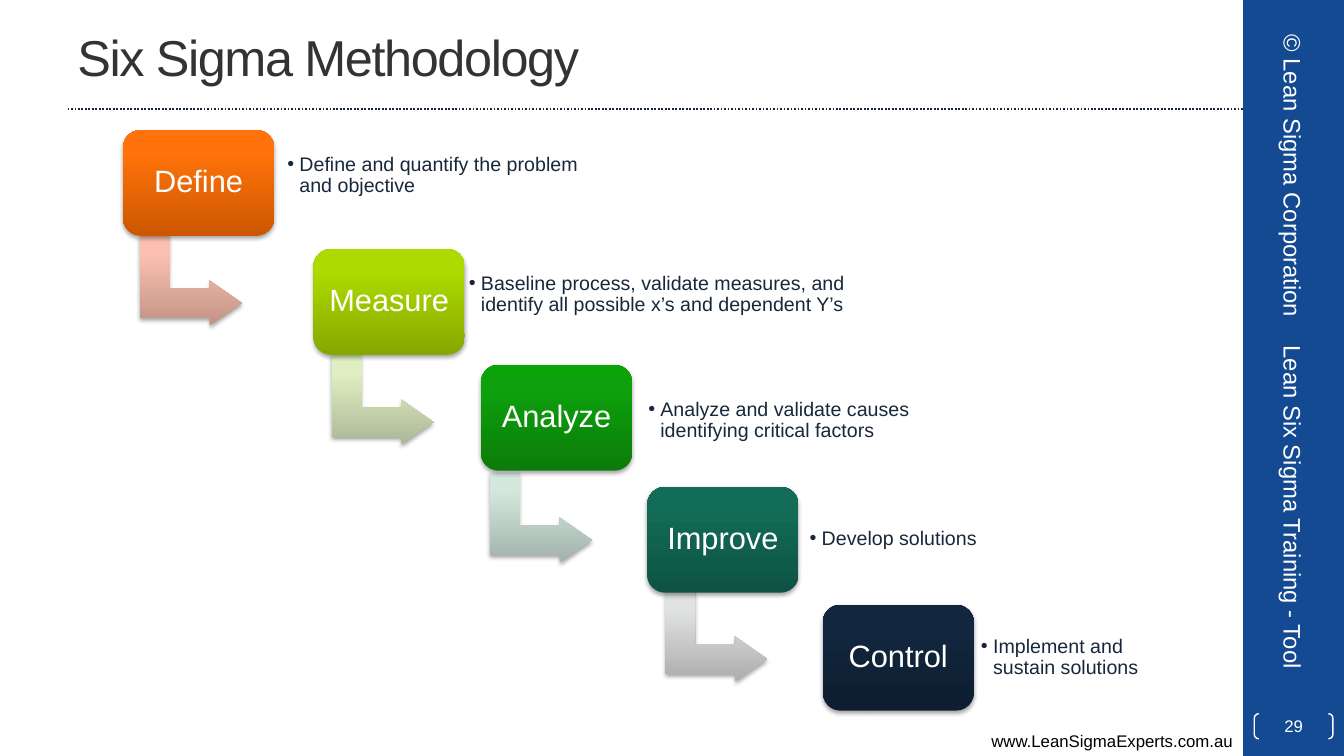
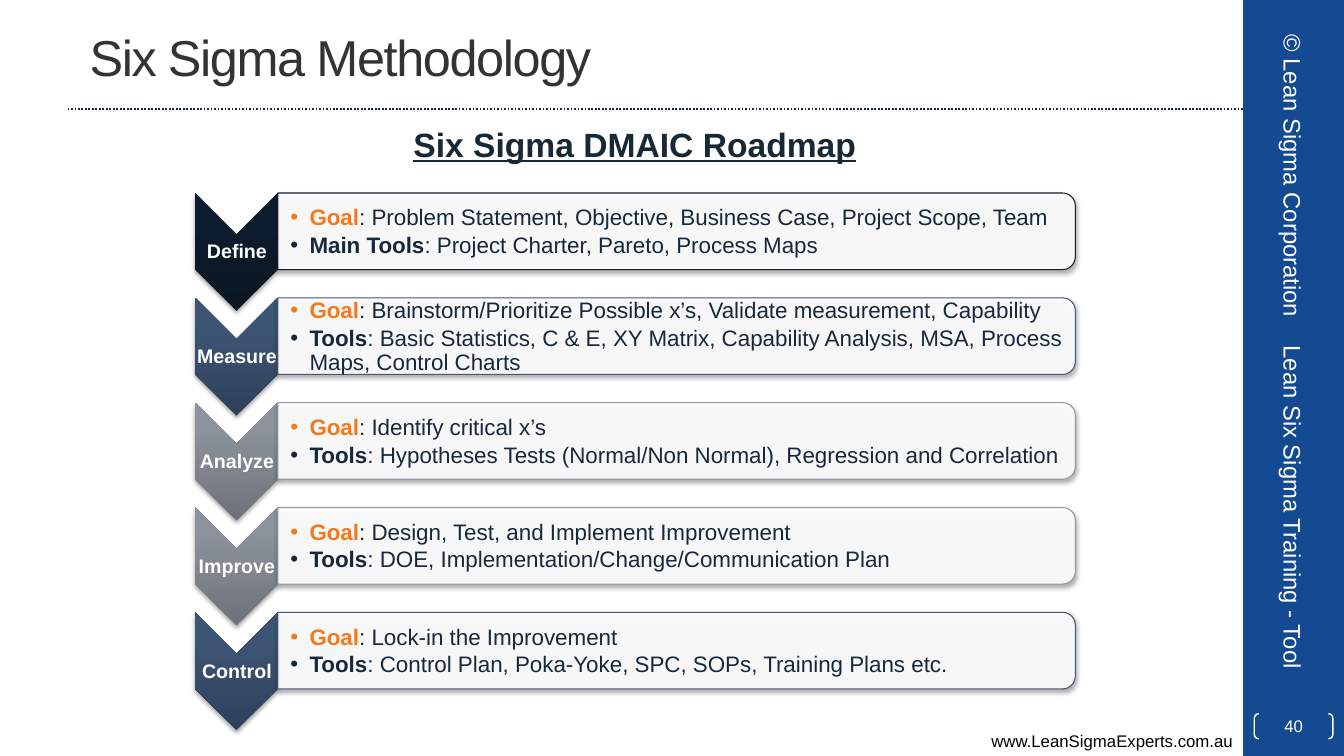
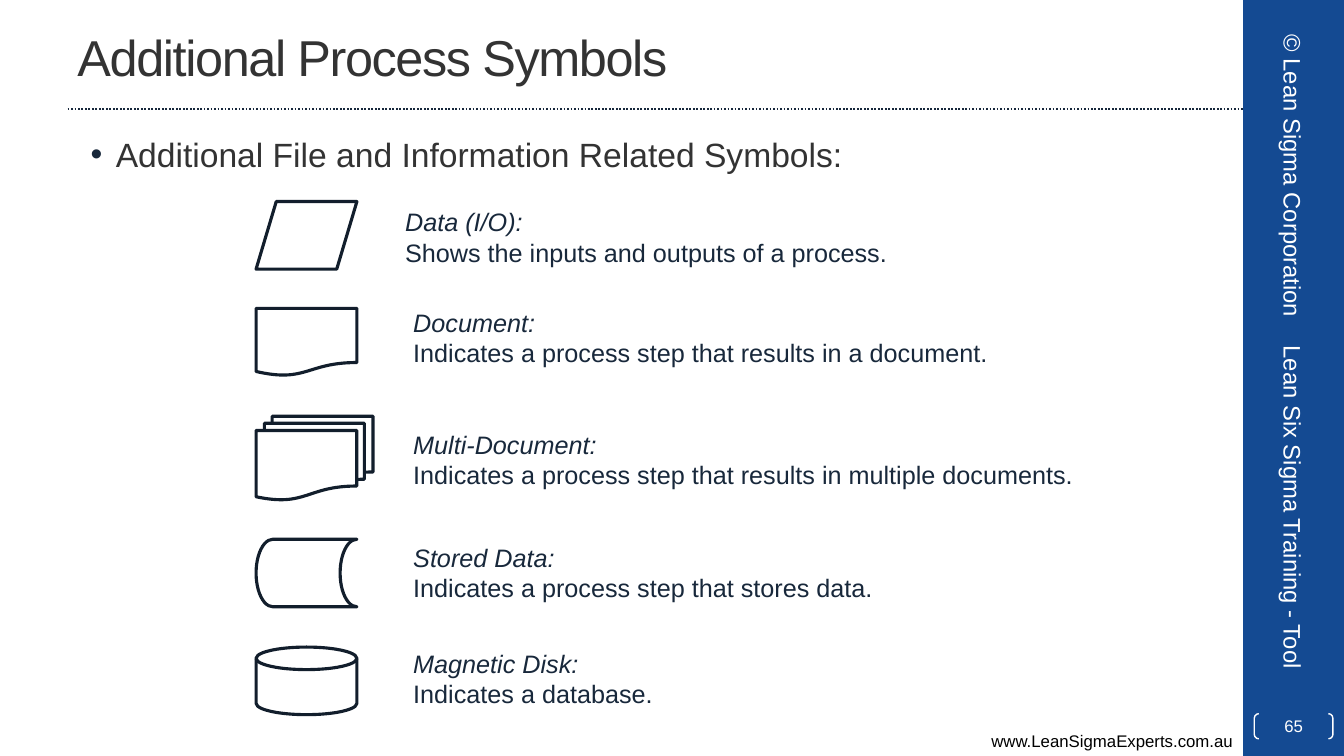
import pptx
import pptx.dml.color
import pptx.enum.dml
import pptx.enum.shapes
import pptx.enum.text
import pptx.oxml
import pptx.oxml.ns
import pptx.util

PX = 9144
FONT = "Arial"
RGB = pptx.dml.color.RGBColor
KIND = pptx.enum.shapes.MSO_SHAPE
ALIGN = pptx.enum.text.PP_ALIGN
ANCHOR = pptx.enum.text.MSO_ANCHOR
SPACE = pptx.oxml.ns.nsdecls("a")

WHITE = RGB(0xFF, 0xFF, 0xFF)
BLACK = RGB(0x00, 0x00, 0x00)
BLUE = RGB(0x14, 0x4A, 0x92)
RULE = RGB(0x17, 0x27, 0x3B)
GREY = RGB(0x33, 0x33, 0x33)
INK = RGB(0x18, 0x28, 0x3B)
HEAD = RGB(0x18, 0x28, 0x35)
EDGE = RGB(0x12, 0x1E, 0x2C)
ORANGE = RGB(0xF4, 0x79, 0x1D)
SLATE = RGB(0x46, 0x58, 0x72)
SILVER = RGB(0x94, 0x98, 0xA0)

NAVY_FADE = RGB(0x0A, 0x16, 0x23), RGB(0x0D, 0x1C, 0x2E), RGB(0x0D, 0x1C, 0x2F)
SLATE_FADE = RGB(0x2F, 0x41, 0x5A), RGB(0x3D, 0x55, 0x75), RGB(0x3D, 0x55, 0x77)
SILVER_FADE = RGB(0x6D, 0x71, 0x79), RGB(0x8D, 0x93, 0x9D), RGB(0x8E, 0x94, 0x9E)

ORANGE_FADE = RGB(0xCC, 0x57, 0x00), RGB(0xFF, 0x73, 0x0A), RGB(0xFF, 0x73, 0x0B)
LIME_FADE = RGB(0x85, 0xA8, 0x00), RGB(0xAD, 0xDA, 0x00), RGB(0xAE, 0xDC, 0x00)
GREEN_FADE = RGB(0x0B, 0x7C, 0x09), RGB(0x0E, 0xA1, 0x0C), RGB(0x0B, 0xA4, 0x09)
TEAL_FADE = RGB(0x0E, 0x53, 0x43), RGB(0x13, 0x6C, 0x57), RGB(0x11, 0x6E, 0x58)
NIGHT_FADE = RGB(0x0E, 0x1E, 0x30), RGB(0x12, 0x26, 0x3E), RGB(0x11, 0x26, 0x3F)
PEACH_FADE = RGB(0xC1, 0x94, 0x86), RGB(0xFB, 0xC0, 0xAF), RGB(0xFD, 0xC0, 0xAE)
PALE_FADE = RGB(0xAC, 0xB8, 0x95), RGB(0xDF, 0xEF, 0xC2), RGB(0xE0, 0xF1, 0xC2)
MINT_FADE = RGB(0xA2, 0xB2, 0xAA), RGB(0xD3, 0xE7, 0xDD), RGB(0xD3, 0xE8, 0xDE)
ASH_FADE = RGB(0xAD, 0xAD, 0xAE), RGB(0xE0, 0xE1, 0xE1), RGB(0xE1, 0xE2, 0xE2)

STEPS = [
    ("Define", 122, 129, ORANGE_FADE, (145, 228), PEACH_FADE,
     (279, 133, 314, 82), "Define and quantify the problem and objective"),
    ("Measure", 311, 247, LIME_FADE, (335, 346), PALE_FADE,
     (459, 250, 441, 85), "Baseline process, validate measures, and identify all possible x’s and dependent Y’s"),
    ("Analyze", 477, 362, GREEN_FADE, (492, 463), MINT_FADE,
     (637, 375, 354, 85), "Analyze and validate causes identifying critical factors"),
    ("Improve", 642, 483, TEAL_FADE, (666, 581), ASH_FADE,
     (797, 492, 234, 85), "Develop solutions"),
    ("Control", 816, 600, NIGHT_FADE, None, None,
     (967, 605, 217, 95), "Implement and sustain solutions"),
]

PHASES = [
    ("Define", NAVY_FADE, EDGE, "Problem Statement, Objective, Business Case, Project Scope, Team",
     "Main Tools", "Project Charter, Pareto, Process Maps"),
    ("Measure", SLATE_FADE, SLATE, "Brainstorm/Prioritize Possible x’s, Validate measurement, Capability",
     "Tools", "Basic Statistics, C & E, XY Matrix, Capability Analysis, MSA, Process Maps, Control Charts"),
    ("Analyze", SILVER_FADE, SILVER, "Identify critical x’s",
     "Tools", "Hypotheses Tests (Normal/Non Normal), Regression and Correlation"),
    ("Improve", SILVER_FADE, SILVER, "Design, Test, and Implement Improvement",
     "Tools", "DOE, Implementation/Change/Communication Plan"),
    ("Control", SLATE_FADE, SLATE, "Lock-in the Improvement",
     "Tools", "Control Plan, Poka-Yoke, SPC, SOPs, Training Plans etc."),
]

SYMBOLS = [
    (KIND.FLOWCHART_DATA, (254, 200, 100, 67), (392, 200),
     "Data (I/O):", "Shows the inputs and outputs of a process."),
    (KIND.FLOWCHART_DOCUMENT, (254, 306, 100, 67), (400, 300),
     "Document:", "Indicates a process step that results in a document."),
    (KIND.FLOWCHART_MULTIDOCUMENT, (254, 413, 116, 83), (400, 421),
     "Multi-Document:", "Indicates a process step that results in multiple documents."),
    (KIND.FLOWCHART_STORED_DATA, (254, 535, 100, 67), (400, 533),
     "Stored Data:", "Indicates a process step that stores data."),
    (KIND.FLOWCHART_MAGNETIC_DISK, (254, 642, 100, 67), (400, 638),
     "Magnetic Disk:", "Indicates a database."),
]


def scale(box):
    return [v * PX for v in box]


def shade(shape):
    shape.shadow.inherit = False
    shape._element.spPr.find(pptx.oxml.ns.qn("a:effectLst")).append(pptx.oxml.parse_xml(
        f'<a:outerShdw {SPACE} blurRad="40000" dist="23000" dir="5400000" rotWithShape="0">'
        '<a:srgbClr val="000000"><a:alpha val="35000"/></a:srgbClr></a:outerShdw>'))


def fade(shape, tones):
    shape.fill.solid()
    flat = shape._element.spPr.find(pptx.oxml.ns.qn("a:solidFill"))
    stops = "".join(f'<a:gs pos="{at}"><a:srgbClr val="{tone}"/></a:gs>'
                    for at, tone in zip((0, 80000, 100000), tones))
    flat.getparent().replace(flat, pptx.oxml.parse_xml(
        f'<a:gradFill {SPACE} rotWithShape="0"><a:gsLst>{stops}</a:gsLst>'
        '<a:lin ang="16200000" scaled="0"/></a:gradFill>'))
    shade(shape)


def draw(slide, kind, box, fill=None, line=None, width=1, turn=0, bends=()):
    shape = slide.shapes.add_shape(kind, *scale(box))
    shape.shadow.inherit = False
    shape.rotation = turn
    for i, bend in enumerate(bends):
        shape.adjustments[i] = bend
    if isinstance(fill, tuple) and not isinstance(fill, RGB):
        fade(shape, fill)
    elif fill is not None:
        shape.fill.solid()
        shape.fill.fore_color.rgb = fill
    else:
        shape.fill.background()
    if line is None:
        shape.line.fill.background()
    else:
        shape.line.color.rgb = line
        shape.line.width = pptx.util.Pt(width)
    return shape


def bullet(para, left, hang, tone=None):
    props = para._p.get_or_add_pPr()
    props.set("marL", str(left * PX))
    props.set("indent", str(-hang * PX))
    if tone is not None:
        props.append(pptx.oxml.parse_xml(
            f'<a:buClr {SPACE}><a:srgbClr val="{tone}"/></a:buClr>'))
    props.append(pptx.oxml.parse_xml(f'<a:buFont {SPACE} typeface="{FONT}"/>'))
    props.append(pptx.oxml.parse_xml(f'<a:buChar {SPACE} char="•"/>'))


def fill_text(shape, paras, size, tone, align=ALIGN.LEFT, anchor=ANCHOR.TOP,
              pads=(10, 5, 10, 5), lead=None, after=0, mark=None):
    frame = shape.text_frame
    frame.word_wrap = True
    frame.vertical_anchor = anchor
    (frame.margin_left, frame.margin_top,
     frame.margin_right, frame.margin_bottom) = scale(pads)
    for i, runs in enumerate(paras):
        para = frame.paragraphs[0] if i == 0 else frame.add_paragraph()
        para.alignment = align
        if lead:
            para.line_spacing = lead
        if after:
            para.space_after = pptx.util.Pt(after)
        if mark:
            bullet(para, *mark)
        for text, look in runs:
            run = para.add_run()
            run.text = text
            run.font.name = FONT
            run.font.size = pptx.util.Pt(size)
            run.font.color.rgb = look.get("tone", tone)
            run.font.bold = look.get("bold", False)
            run.font.italic = look.get("slant", False)
            run.font.underline = look.get("under", False)
            if "track" in look:
                run._r.get_or_add_rPr().set("spc", str(look["track"]))


def write(slide, box, paras, size, tone, turn=0, **style):
    shape = slide.shapes.add_textbox(*scale(box))
    shape.rotation = turn
    fill_text(shape, paras, size, tone, **style)


def side_band(slide, box, page):
    x, y, w, h = box
    draw(slide, KIND.RECTANGLE, box, BLUE)
    mid = x + w // 2
    write(slide, (mid - 159, y + 148, 317, 53), [[("© Lean Sigma Corporation", {})]],
          17, WHITE, 90, align=ALIGN.CENTER, anchor=ANCHOR.MIDDLE)
    write(slide, (mid - 184, y + 490, 367, 53), [[("Lean Six Sigma Training - Tool", {})]],
          17, WHITE, 90, anchor=ANCHOR.MIDDLE)
    badge = draw(slide, KIND.DOUBLE_BRACKET, (x + 11, y + h - 42, 78, 25),
                 line=WHITE, bends=(0.18,))
    fill_text(badge, [[(page, {})]], 12, WHITE, ALIGN.CENTER, ANCHOR.MIDDLE, (0, 0, 0, 0))


def start(deck, title, page, shift=0):
    slide = deck.slides.add_slide(deck.slide_layouts[6])
    side_band(slide, (1233, 0, 100, 750), page)
    rule = slide.shapes.add_connector(pptx.enum.shapes.MSO_CONNECTOR.STRAIGHT,
                                      *scale((67, 108, 1233, 108)))
    rule.line.color.rgb = RULE
    rule.line.width = pptx.util.Pt(1.25)
    rule.line.dash_style = pptx.enum.dml.MSO_LINE.ROUND_DOT
    rule._element.spPr.append(pptx.oxml.parse_xml(f"<a:effectLst {SPACE}/>"))
    write(slide, (0, 720, 1233, 30), [[("www.LeanSigmaExperts.com.au", {})]],
          12, BLACK, align=ALIGN.RIGHT)
    write(slide, (67 + shift, 3, 1111 - shift, 105), [[(title, {"track": -100})]],
          36, GREY, anchor=ANCHOR.MIDDLE)
    return slide


def step(slide, name, x, y, tones, bend, pale, note, text):
    if bend:
        draw(slide, KIND.BENT_UP_ARROW, (*bend, 89, 101), pale, turn=90,
             bends=(0.33, 0.25, 0.36))
    card = draw(slide, KIND.ROUNDED_RECTANGLE, (x, y, 150, 105), tones)
    fill_text(card, [[(name, {})]], 22, WHITE, ALIGN.CENTER, ANCHOR.MIDDLE,
              (9, 9, 9, 9), 0.9)
    write(slide, note, [[(text, {})]], 14, INK, anchor=ANCHOR.MIDDLE,
          pads=(6, 6, 6, 6), lead=0.9, mark=(12, 12))


def phase(slide, box, name, tones, edge, goal, label, tools):
    x, y, w, h = box
    tip, deep, wide = 82, 117, w - 82
    draw(slide, KIND.CHEVRON, (x + (tip - deep) // 2, y + (deep - tip) // 2, deep, tip),
         tones, turn=90)
    write(slide, (x, y + 41, tip, 35), [[(name, {"bold": True})]], 14, WHITE,
          align=ALIGN.CENTER, anchor=ANCHOR.MIDDLE, pads=(1, 1, 1, 1), lead=0.9)
    panel = draw(slide, KIND.ROUND_2_SAME_RECTANGLE,
                 (x + tip + (wide - h) // 2, y + (h - wide) // 2, h, wide),
                 WHITE, edge, 0.75, 90)
    shade(panel)
    tint = panel._element.spPr.find(pptx.oxml.ns.qn("a:solidFill"))[0]
    tint.append(pptx.oxml.parse_xml(f'<a:alpha {SPACE} val="90000"/>'))
    bold = {"bold": True}
    write(slide, (x + tip, y + 4, wide - 4, h - 7),
          [[("Goal", {"bold": True, "tone": ORANGE}), (": " + goal, {})],
           [(label, bold), (": " + tools, {})]],
          16, INK, anchor=ANCHOR.MIDDLE, pads=(12, 1, 1, 1), lead=0.9, after=2.4,
          mark=(19, 19))


def symbol(slide, kind, box, spot, name, text):
    draw(slide, kind, box, line=EDGE, width=2.25)
    write(slide, (*spot, 1092 - spot[0], 71),
          [[(name, {"slant": True})], [(text, {})]], 18, INK)


def method(deck):
    slide = start(deck, "Six Sigma Methodology", "29")
    for row in STEPS:
        step(slide, *row)


def roadmap(deck):
    slide = start(deck, "Six Sigma Methodology", "40", 12)
    for i, row in enumerate(PHASES):
        phase(slide, (194, 192 + 104 * i, 873, 76), *row)
    write(slide, (167, 118, 925, 50),
          [[("Six Sigma DMAIC Roadmap", {"bold": True, "under": True})]],
          24, HEAD, align=ALIGN.CENTER)


def symbols(deck):
    slide = start(deck, "Additional Process Symbols", "65")
    write(slide, (67, 128, 1111, 50),
          [[("Additional File and Information Related Symbols:", {})]],
          24, GREY, mark=(38, 25, INK))
    for row in SYMBOLS:
        symbol(slide, *row)


def main():
    deck = pptx.Presentation()
    deck.slide_width, deck.slide_height = scale((1333, 750))
    method(deck)
    roadmap(deck)
    symbols(deck)
    deck.save("out.pptx")


if __name__ == "__main__":
    main()
